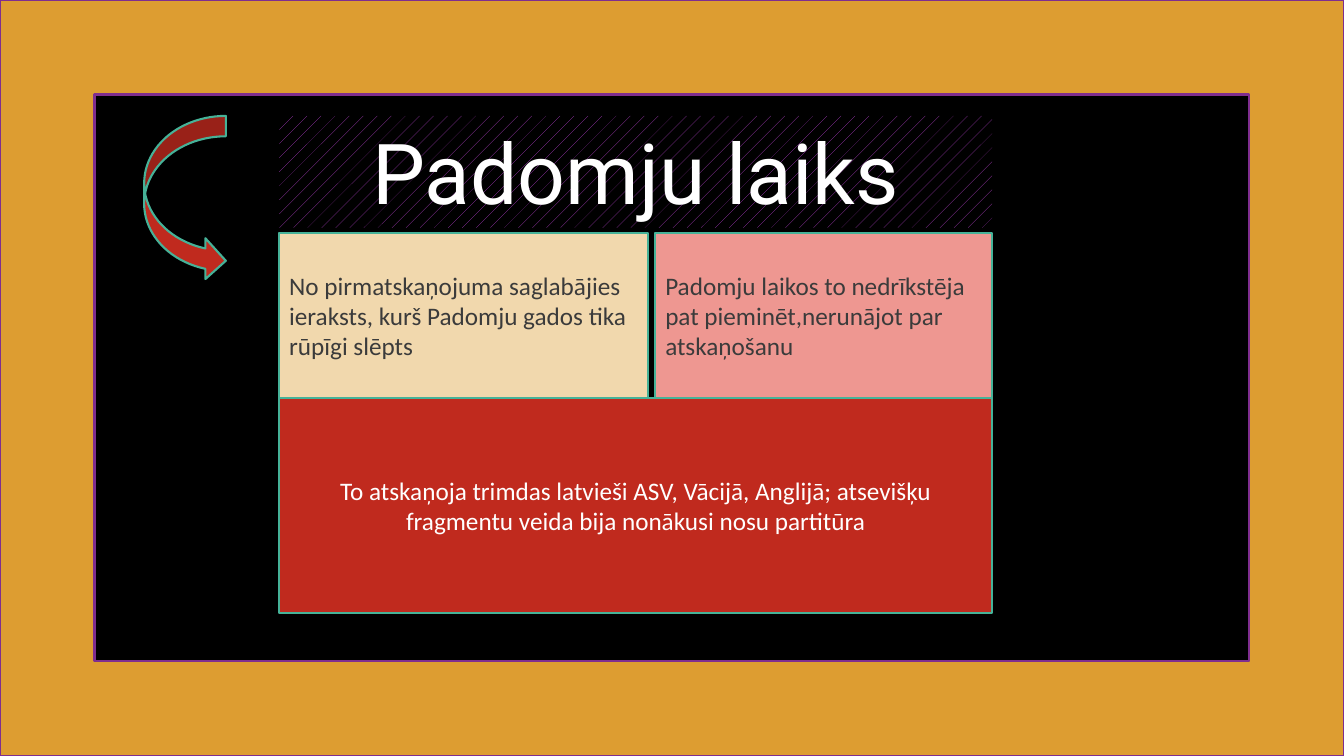
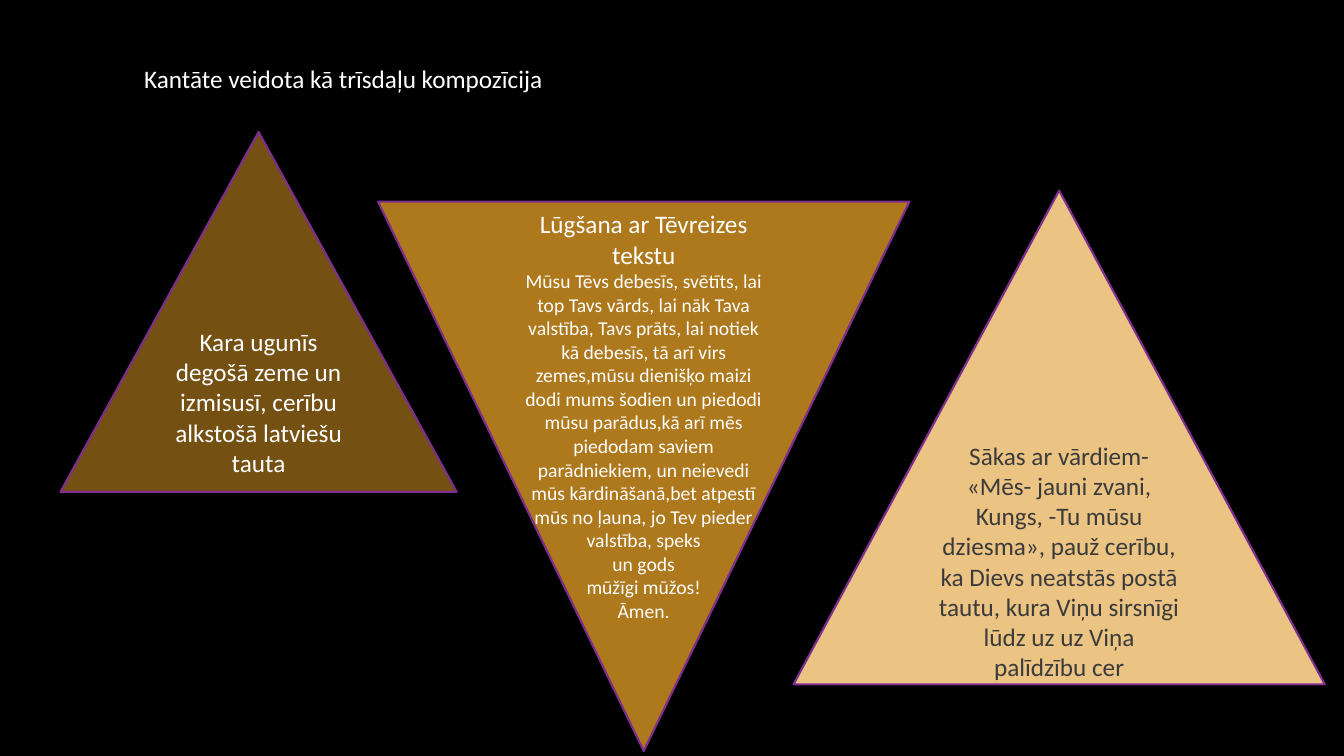
from dataclasses import dataclass

from pptx import Presentation
from pptx.dml.color import RGBColor
from pptx.enum.dml import MSO_PATTERN
from pptx.enum.shapes import MSO_SHAPE as Form
from pptx.enum.text import MSO_ANCHOR as Anchor, MSO_AUTO_SIZE, PP_ALIGN as Align
from pptx.presentation import Presentation as Deck
from pptx.shapes.base import BaseShape
from pptx.slide import Slide
from pptx.util import Inches, Pt


@dataclass(frozen=True)
class Theme:
    black: str = "000000"
    white: str = "FFFFFF"
    ink: str = "3B3B3B"
    purple: str = "7F2E8F"
    violet: str = "AC3EC1"
    teal: str = "46B298"
    gold: str = "DD9D31"
    red: str = "C02A1E"
    sand: str = "F1D8AD"
    rose: str = "EE9791"
    brown: str = "745013"
    ochre: str = "AE781D"
    honey: str = "EBC483"
    body_font: str = "Calibri"
    display_font: str = "Roboto"
    display: float = 60
    body: float = 18
    small: float = 14
    outline: float = 1.5


THEME = Theme()


@dataclass(frozen=True)
class Box:
    left: float
    top: float
    width: float
    height: float


@dataclass(frozen=True)
class Panel:
    form: Form
    box: Box
    fill: str
    line: str
    lines: tuple[str, ...] = ()
    color: str = THEME.white
    align: Align = Align.CENTER
    anchor: Anchor = Anchor.MIDDLE
    rest_size: float = THEME.body
    top_inset: float = 0.05


def rgb(value: str) -> RGBColor:
    return RGBColor.from_string(value)


def write_text(shape: BaseShape, *lines: str, size: float = THEME.body,
               rest_size: float | None = None, font: str = THEME.body_font,
               color: str = THEME.white, align: Align = Align.LEFT,
               anchor: Anchor = Anchor.TOP, top_inset: float = 0.05) -> None:
    frame = shape.text_frame
    frame.word_wrap = True
    frame.auto_size = MSO_AUTO_SIZE.NONE
    frame.vertical_anchor = anchor
    frame.margin_top = Inches(top_inset)
    for index, line in enumerate(lines):
        paragraph = frame.add_paragraph() if index else frame.paragraphs[0]
        paragraph.alignment = align
        run = paragraph.add_run()
        run.text = line
        run.font.name = font
        run.font.size = Pt(rest_size if index and rest_size else size)
        run.font.color.rgb = rgb(color)


def place_title(slide: Slide, box: Box) -> BaseShape:
    title = slide.shapes.title
    title.left, title.top = Inches(box.left), Inches(box.top)
    title.width, title.height = Inches(box.width), Inches(box.height)
    return title


def draw_panel(slide: Slide, panel: Panel) -> None:
    box = panel.box
    shape = slide.shapes.add_shape(panel.form, Inches(box.left), Inches(box.top),
                                   Inches(box.width), Inches(box.height))
    shape.shadow.inherit = False
    shape.fill.solid()
    shape.fill.fore_color.rgb = rgb(panel.fill)
    shape.line.color.rgb = rgb(panel.line)
    shape.line.width = Pt(THEME.outline)
    if panel.lines:
        write_text(shape, *panel.lines, rest_size=panel.rest_size, color=panel.color,
                   align=panel.align, anchor=panel.anchor, top_inset=panel.top_inset)


SOVIET_ERA = (
    Panel(Form.FRAME, Box(0, 0, 13.33, 7.5), THEME.gold, THEME.purple),
    Panel(Form.RECTANGLE, Box(2.77, 3.95, 7.07, 2.13), THEME.red, THEME.teal,
          ("To atskaņoja trimdas latvieši ASV, Vācijā, Anglijā; atsevišķu "
           "fragmentu veida bija nonākusi nosu partitūra",)),
    Panel(Form.RECTANGLE, Box(2.77, 2.31, 3.66, 1.64), THEME.sand, THEME.teal,
          ("No pirmatskaņojuma saglabājies ieraksts, kurš Padomju gados tika "
           "rūpīgi slēpts",), THEME.ink, Align.LEFT),
    Panel(Form.RECTANGLE, Box(6.5, 2.31, 3.34, 1.64), THEME.rose, THEME.teal,
          ("Padomju laikos to nedrīkstēja pat pieminēt,nerunājot par atskaņošanu",),
          THEME.ink, Align.LEFT),
    Panel(Form.CURVED_RIGHT_ARROW, Box(1.43, 1.15, 0.81, 1.64), THEME.red, THEME.teal),
)

CANTATA_PARTS = (
    Panel(Form.FLOWCHART_EXTRACT, Box(0.6, 1.31, 3.93, 3.57), THEME.brown, THEME.purple,
          ("Kara ugunīs degošā zeme un izmisusī, cerību alkstošā latviešu tauta",)),
    Panel(Form.FLOWCHART_EXTRACT, Box(7.87, 1.89, 5.27, 4.9), THEME.honey, THEME.purple,
          ("Sākas ar vārdiem- «Mēs- jauni zvani, Kungs, -Tu mūsu dziesma», pauž "
           "cerību, ka Dievs neatstās postā tautu, kura Viņu sirsnīgi lūdz uz uz "
           "Viņa palīdzību cer",), THEME.ink),
    Panel(Form.FLOWCHART_MERGE, Box(3.75, 2, 5.27, 5.45), THEME.ochre, THEME.purple,
          ("Lūgšana ar Tēvreizes tekstu",
           "Mūsu Tēvs debesīs, svētīts, lai top Tavs vārds, lai nāk Tava valstība, "
           "Tavs prāts, lai notiek kā debesīs, tā arī virs zemes,mūsu dienišķo maizi "
           "dodi mums šodien un piedodi mūsu parādus,kā arī mēs piedodam saviem "
           "parādniekiem, un neievedi mūs kārdināšanā,bet atpestī mūs no ļauna, jo "
           "Tev pieder valstība, speks",
           "un gods",
           "mūžīgi mūžos!",
           "Āmen."),
          anchor=Anchor.TOP, rest_size=THEME.small, top_inset=0.07),
)


def add_slide(deck: Deck, panels: tuple[Panel, ...]) -> Slide:
    slide = deck.slides.add_slide(deck.slide_layouts[5])
    for panel in panels:
        draw_panel(slide, panel)
    return slide


def build_soviet_era(deck: Deck) -> None:
    slide = add_slide(deck, SOVIET_ERA)
    heading = place_title(slide, Box(2.77, 1.15, 7.07, 1.11))
    heading.fill.patterned()
    heading.fill.pattern = MSO_PATTERN.PERCENT_5
    heading.fill.fore_color.rgb = rgb(THEME.violet)
    heading.fill.back_color.rgb = rgb(THEME.black)
    write_text(heading, "Padomju laiks", size=THEME.display,
               font=THEME.display_font, align=Align.CENTER)


def build_cantata(deck: Deck) -> None:
    slide = add_slide(deck, CANTATA_PARTS)
    heading = place_title(slide, Box(1.33, 0.58, 9.61, 0.4))
    write_text(heading, "Kantāte veidota kā trīsdaļu kompozīcija")


def main() -> None:
    deck = Presentation()
    deck.slide_width, deck.slide_height = Inches(13.33), Inches(7.5)
    backdrop = deck.slide_master.background.fill
    backdrop.solid()
    backdrop.fore_color.rgb = rgb(THEME.black)
    build_soviet_era(deck)
    build_cantata(deck)
    deck.save("out.pptx")


if __name__ == "__main__":
    main()
